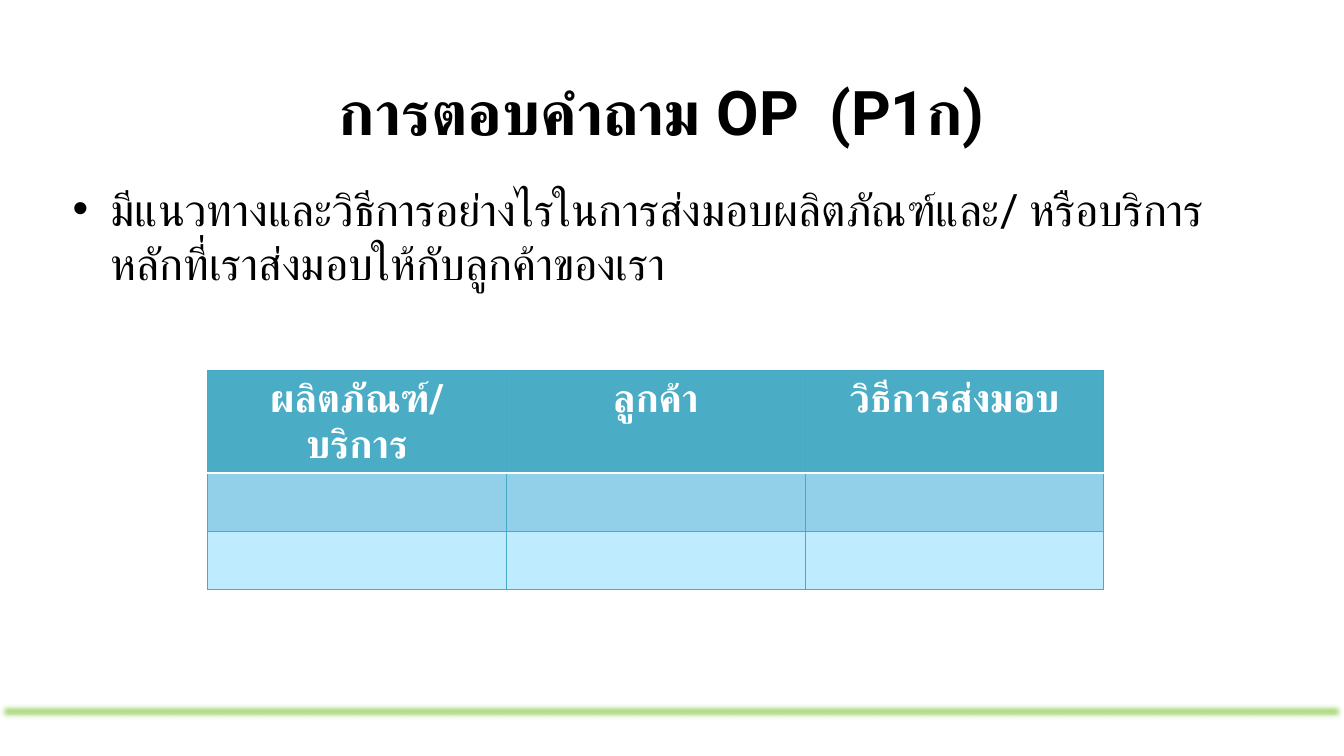
from dataclasses import dataclass

from lxml.etree import SubElement as Sub
from pptx import Presentation
from pptx.dml.color import RGBColor
from pptx.enum.shapes import MSO_SHAPE as Shape
from pptx.enum.text import MSO_ANCHOR as Anchor, PP_ALIGN as Align
from pptx.oxml.ns import qn
from pptx.util import Inches, Pt

BLACK = RGBColor(0x00, 0x00, 0x00)
WHITE = RGBColor(0xFF, 0xFF, 0xFF)
GREEN = RGBColor(0x7E, 0xC2, 0x34)
TEAL = RGBColor(0x4B, 0xAC, 0xC6)
EDGE = RGBColor(0x46, 0xAA, 0xC5)
SKY = RGBColor(0x92, 0xD0, 0xE9)
PALE = RGBColor(0xBF, 0xEB, 0xFF)
FACE = "Roboto"


@dataclass
class Text:
    words: str
    size: int
    color: RGBColor
    bold: bool
    align: Align


@dataclass
class Band:
    fill: RGBColor
    high: float
    words: tuple[str, ...]


TITLE = Text("การตอบคำถาม OP  (P1ก) ", 44, BLACK, True, Align.CENTER)
BODY = Text(
    "มีแนวทางและวิธีการอย่างไรในการส่งมอบผลิตภัณฑ์และ/ หรือบริการหลักที่เราส่งมอบให้กับลูกค้าของเรา",
    32, BLACK, False, Align.LEFT)
BANDS = (
    Band(TEAL, 0.95, ("ผลิตภัณฑ์/ บริการ", "ลูกค้า", "วิธีการส่งมอบ")),
    Band(SKY, 0.58, ("", "", "")),
    Band(PALE, 0.58, ("", "", "")),
)


def write(frame, text: Text) -> None:
    para = frame.paragraphs[0]
    para.alignment = text.align
    run = para.add_run()
    run.text = text.words
    style = {"name": FACE, "size": Pt(text.size), "bold": text.bold}
    for key, value in style.items():
        setattr(run.font, key, value)
    run.font.color.rgb = text.color
    Sub(run.font._element, qn("a:cs"), typeface=FACE)


def place(item, left: float, top: float, width: float, height: float) -> None:
    box = {"left": left, "top": top, "width": width, "height": height}
    for key, value in box.items():
        setattr(item, key, Inches(value))


def border(cell, side: str, color: RGBColor, width: float) -> None:
    line = Sub(cell._tc.get_or_add_tcPr(), qn(f"a:{side}"), w=str(Pt(width)))
    fill = Sub(line, qn("a:solidFill"))
    Sub(fill, qn("a:srgbClr"), val=str(color))


def bar(slide) -> None:
    strip = slide.shapes.add_shape(
        Shape.RECTANGLE, 0, Inches(6.98), Inches(13.33), Inches(0.16))
    strip.shadow.inherit = False
    strip.fill.solid()
    strip.fill.fore_color.rgb = GREEN
    strip.line.fill.background()
    effects = strip._element.spPr.find(qn("a:effectLst"))
    Sub(effects, qn("a:softEdge"), rad=str(Pt(5)))


def grid(slide) -> None:
    high = sum(band.high for band in BANDS)
    table = slide.shapes.add_table(
        len(BANDS), 3, Inches(2.06), Inches(3.68), Inches(8.89), Inches(high)).table
    for row, band in enumerate(BANDS):
        table.rows[row].height = Inches(band.high)
        for col, words in enumerate(band.words):
            cell = table.cell(row, col)
            for side in ("lnL", "lnR", "lnT", "lnB"):
                rule = (row, side) in ((0, "lnB"), (1, "lnT"))
                border(cell, side, WHITE if rule else EDGE, 2 if rule else 0.75)
            cell.fill.solid()
            cell.fill.fore_color.rgb = band.fill
            if words:
                write(cell.text_frame, Text(words, 28, WHITE, True, Align.CENTER))


def main() -> None:
    deck = Presentation()
    deck.slide_width, deck.slide_height = Inches(13.33), Inches(7.5)
    slide = deck.slides.add_slide(deck.slide_layouts[1])
    bar(slide)
    title, body = slide.placeholders
    place(title, 0.62, 0.47, 12.04, 1.25)
    place(body, 0.62, 1.75, 12.04, 5.2)
    title.text_frame.vertical_anchor = Anchor.MIDDLE
    write(title.text_frame, TITLE)
    write(body.text_frame, BODY)
    grid(slide)
    deck.save("out.pptx")


if __name__ == "__main__":
    main()
